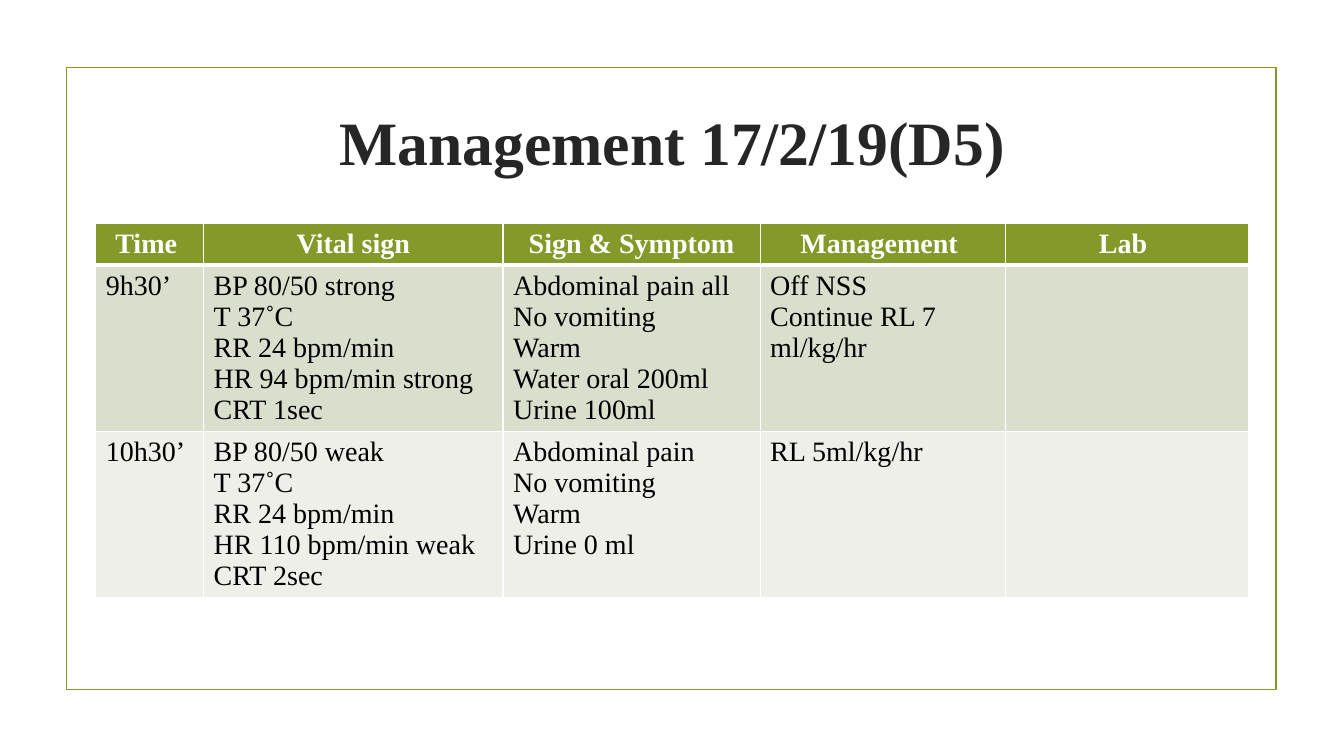
from lxml.etree import SubElement
from pptx import Presentation
from pptx.dml.color import RGBColor
from pptx.enum.shapes import MSO_SHAPE
from pptx.enum.text import MSO_ANCHOR, PP_ALIGN
from pptx.oxml.ns import qn
from pptx.util import Inches, Pt

OLIVE = RGBColor(0x83, 0x99, 0x2A)
CHARCOAL = RGBColor(0x26, 0x26, 0x26)
WHITE = RGBColor(0xFF, 0xFF, 0xFF)
BLACK = RGBColor(0, 0, 0)
BANDS = [RGBColor(0xD9, 0xDE, 0xCD), RGBColor(0xED, 0xEF, 0xE8)]
FONT = "Times New Roman"

COLUMN_WIDTHS = [1.07, 2.97, 2.55, 2.43, 2.41]
HEADER_HEIGHT, VISIT_HEIGHT = 0.41, 1.65
HEADINGS = ["Time ", "Vital sign", "Sign & Symptom", "Management ", "Lab "]
VISITS = [
    [["9h30’"],
     ["BP 80/50 strong", "T 37˚C", "RR 24 bpm/min", "HR 94 bpm/min strong", "CRT 1sec"],
     ["Abdominal pain all", "No vomiting", "Warm", "Water oral 200ml", "Urine 100ml"],
     ["Off NSS", "Continue RL 7 ml/kg/hr"],
     []],
    [["10h30’"],
     ["BP 80/50 weak", "T 37˚C", "RR 24 bpm/min", "HR 110 bpm/min weak", "CRT 2sec"],
     ["Abdominal pain", "No vomiting", "Warm", "Urine 0 ml"],
     ["RL 5ml/kg/hr"],
     []],
]


def write(frame, lines, size=20, color=BLACK, bold=False, align=PP_ALIGN.LEFT):
    """Put one paragraph per line into a text frame."""
    for index, line in enumerate(lines):
        paragraph = frame.paragraphs[0] if index == 0 else frame.add_paragraph()
        paragraph.alignment = align
        run = paragraph.add_run()
        run.text = line
        run.font.name = FONT
        run.font.size = Pt(size)
        run.font.bold = bold
        run.font.color.rgb = color


def format_cell(cell, fill, **border_widths):
    """Give a cell white borders (points by side: L, R, T, B) and a fill."""
    properties = cell._tc.get_or_add_tcPr()
    for side, width in border_widths.items():
        border = SubElement(properties, qn(f"a:ln{side}"), w=str(Pt(width)))
        SubElement(SubElement(border, qn("a:solidFill")), qn("a:srgbClr"), val=str(WHITE))
    cell.fill.solid()
    cell.fill.fore_color.rgb = fill


def add_frame(slide, left, top, width, height):
    frame = slide.shapes.add_shape(
        MSO_SHAPE.RECTANGLE, Inches(left), Inches(top), Inches(width), Inches(height))
    frame.shadow.inherit = False
    frame.fill.background()
    frame.line.color.rgb = OLIVE
    frame.line.width = Pt(1.25)


def add_title(slide, left, top, width, height):
    title = slide.shapes.title
    title.left, title.top = Inches(left), Inches(top)
    title.width, title.height = Inches(width), Inches(height)
    title.text_frame.vertical_anchor = MSO_ANCHOR.MIDDLE
    write(title.text_frame, ["Management 17/2/19(D5)"], size=44, color=CHARCOAL,
          bold=True, align=PP_ALIGN.CENTER)


def add_visit_table(slide, left, top):
    row_heights = [HEADER_HEIGHT] + [VISIT_HEIGHT] * len(VISITS)
    table = slide.shapes.add_table(
        len(row_heights), len(COLUMN_WIDTHS), Inches(left), Inches(top),
        Inches(sum(COLUMN_WIDTHS)), Inches(sum(row_heights))).table
    for column, width in zip(table.columns, COLUMN_WIDTHS):
        column.width = Inches(width)
    for row, height in zip(table.rows, row_heights):
        row.height = Inches(height)

    # Header row
    for cell, heading in zip(table.rows[0].cells, HEADINGS):
        format_cell(cell, OLIVE, L=1, R=1, T=1, B=3)
        write(cell.text_frame, [heading], color=WHITE, bold=True, align=PP_ALIGN.CENTER)

    # One banded row per visit
    for number, (visit, band) in enumerate(zip(VISITS, BANDS), start=1):
        top_width = 3 if number == 1 else 1
        for cell, lines in zip(table.rows[number].cells, visit):
            format_cell(cell, band, L=1, R=1, T=top_width, B=1)
            write(cell.text_frame, lines)


def main():
    presentation = Presentation()
    presentation.slide_width = Inches(13.33)
    presentation.slide_height = Inches(7.5)
    slide = presentation.slides.add_slide(presentation.slide_layouts[5])
    add_frame(slide, 0.66, 0.67, 12, 6.17)
    add_title(slide, 1.42, 0.68, 10.5, 1.43)
    add_visit_table(slide, 0.95, 2.22)
    presentation.save("out.pptx")


if __name__ == "__main__":
    main()
